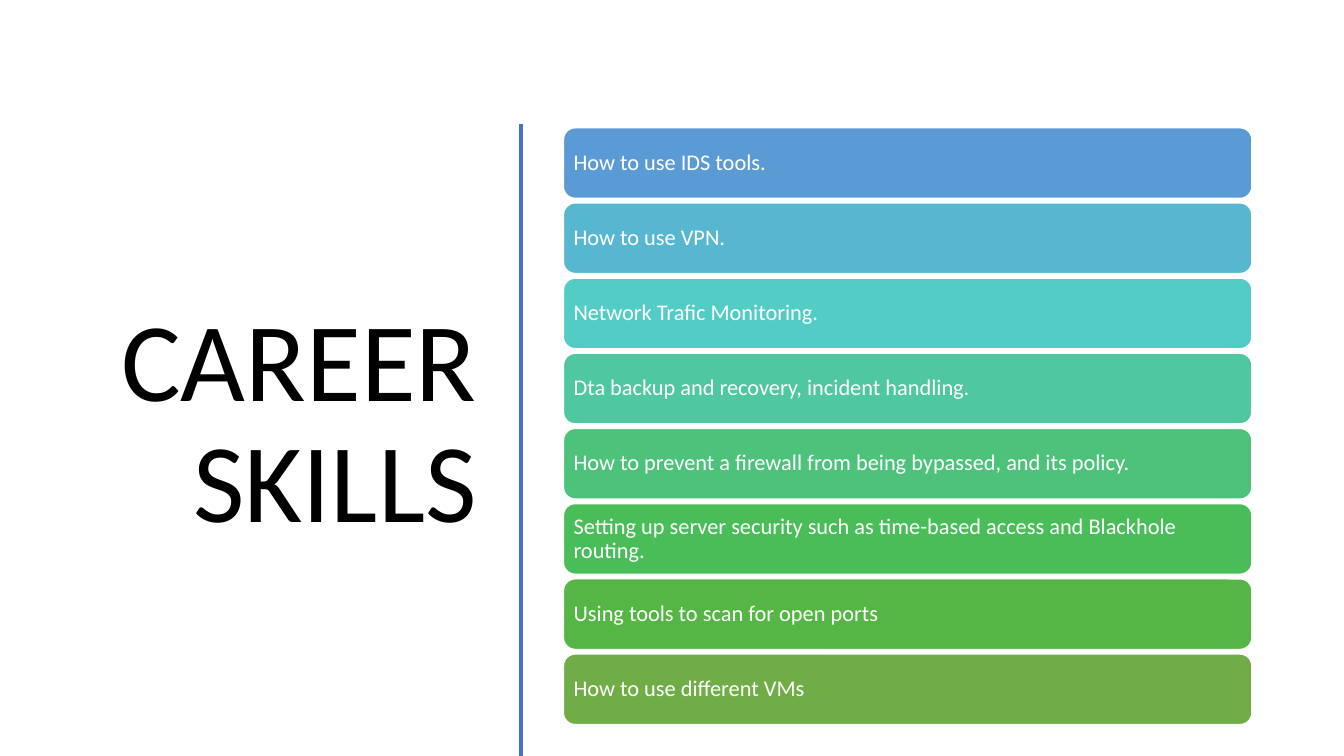
"""Build the career skills slide: a title, a divider and a stack of skill bars."""
from lxml.etree import SubElement
from pptx import Presentation
from pptx.dml.color import RGBColor
from pptx.enum.shapes import MSO_CONNECTOR, MSO_SHAPE
from pptx.enum.text import MSO_ANCHOR, PP_ALIGN
from pptx.oxml.ns import qn
from pptx.util import Cm, Pt

TITLE = "CAREER SKILLS"
SKILLS = [
    ("How to use IDS tools.", "5B9BD5"),
    ("How to use VPN.", "57B7D1"),
    ("Network Trafic Monitoring.", "53CCC5"),
    ("Dta backup and recovery, incident handling.", "4FC7A0"),
    ("How to prevent a firewall from being bypassed, and its policy.", "4CC27B"),
    ("Setting up server security such as time-based access and Blackhole routing.", "48BD58"),
    ("Using tools to scan for open ports", "55B646"),
    ("How to use different VMs", "70AD47"),
]

TITLE_BOX = (1.32, 2.97, 10.95, 15.52)
DIVIDER = (13.13, 3.12, 13.13, 19.05)
BAR_LEFT, BAR_WIDTH, BAR_HEIGHT = 14.2, 17.35, 1.78
FIRST_TOP, LAST_TOP = 3.22, 16.48
BAR_STEP = (LAST_TOP - FIRST_TOP) / (len(SKILLS) - 1)

FRAME_FORMAT = {"word_wrap": True, "vertical_anchor": MSO_ANCHOR.MIDDLE}
BAR_INSETS = {
    f"margin_{side}": Cm(0.17) for side in ("left", "top", "right", "bottom")
}
TITLE_PARAGRAPH = {"alignment": PP_ALIGN.RIGHT, "line_spacing": 0.9}
BAR_PARAGRAPH = {"alignment": PP_ALIGN.LEFT, "line_spacing": 0.9}
TITLE_FONT = {"name": "Calibri", "size": Pt(80)}
BAR_FONT = {"name": "Calibri", "size": Pt(16)}


def color(hex_value):
    return RGBColor.from_string(hex_value)


def apply_format(target, values):
    for name, value in values.items():
        setattr(target, name, value)


def write_text(shape, text, frame_format, paragraph_format, font_format, font_color):
    frame = shape.text_frame
    apply_format(frame, frame_format)
    paragraph = frame.paragraphs[0]
    apply_format(paragraph, paragraph_format)
    run = paragraph.add_run()
    run.text = text
    apply_format(run.font, font_format)
    run.font.color.rgb = color(font_color)


def set_line(line, hex_value, width):
    line.color.rgb = color(hex_value)
    line.width = Pt(width)


def add_title(slide):
    box = slide.shapes.add_textbox(*map(Cm, TITLE_BOX))
    write_text(box, TITLE, FRAME_FORMAT, TITLE_PARAGRAPH, TITLE_FONT, "000000")


def add_divider(slide):
    divider = slide.shapes.add_connector(MSO_CONNECTOR.STRAIGHT, *map(Cm, DIVIDER))
    set_line(divider.line, "4472C4", 2.25)
    SubElement(divider._element.spPr, qn("a:effectLst"))


def add_skill_bars(slide):
    for index, (skill, fill) in enumerate(SKILLS):
        bounds = (BAR_LEFT, FIRST_TOP + index * BAR_STEP, BAR_WIDTH, BAR_HEIGHT)
        bar = slide.shapes.add_shape(MSO_SHAPE.ROUNDED_RECTANGLE, *map(Cm, bounds))
        bar.shadow.inherit = False
        bar.fill.solid()
        bar.fill.fore_color.rgb = color(fill)
        set_line(bar.line, "FFFFFF", 1)
        write_text(bar, skill, FRAME_FORMAT | BAR_INSETS, BAR_PARAGRAPH, BAR_FONT, "FFFFFF")


def main():
    presentation = Presentation()
    apply_format(presentation, {"slide_width": Cm(33.87), "slide_height": Cm(19.05)})
    slide = presentation.slides.add_slide(presentation.slide_layouts[6])
    add_title(slide)
    add_divider(slide)
    add_skill_bars(slide)
    presentation.save("out.pptx")


if __name__ == "__main__":
    main()
